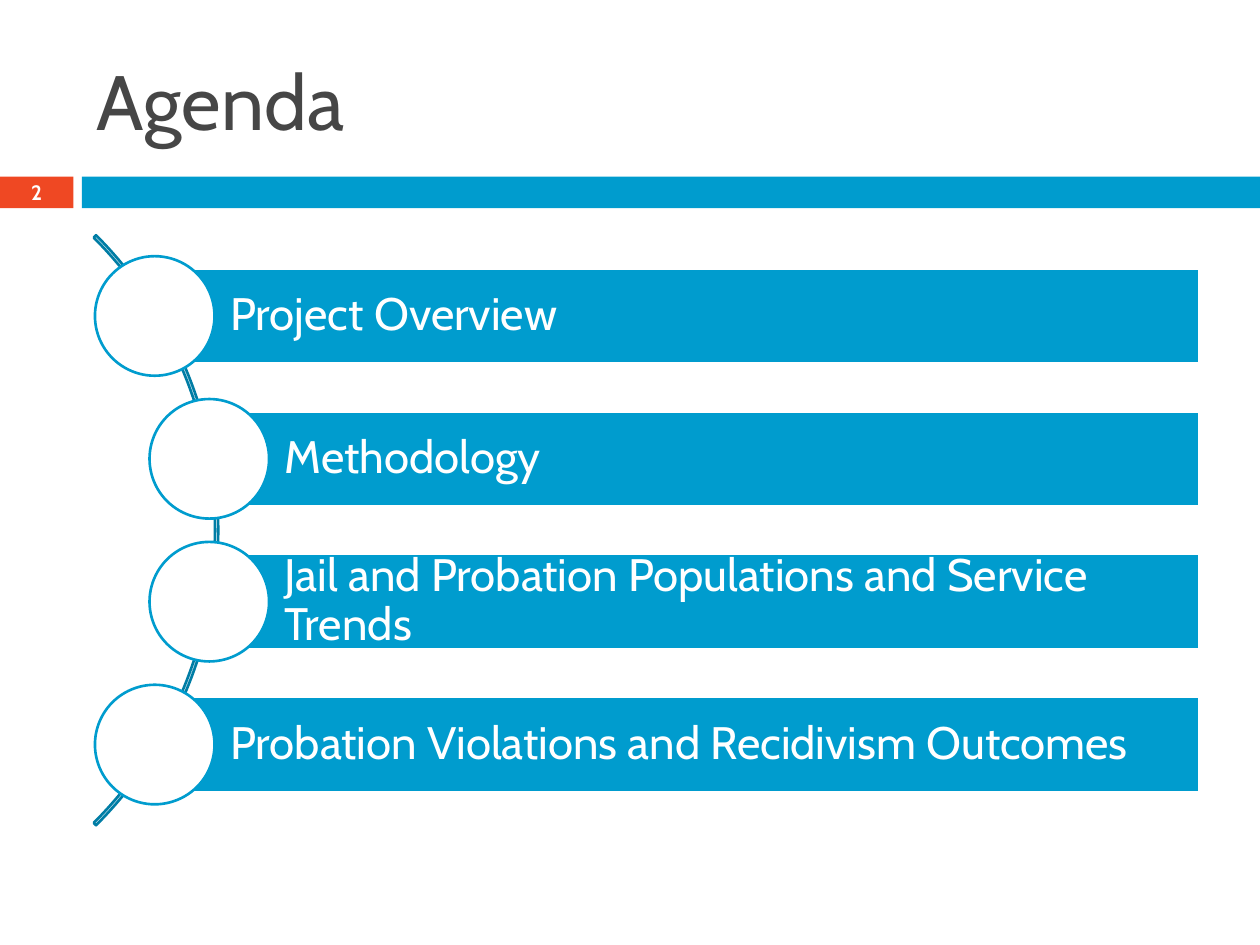
import pptx
import pptx.util
import pptx.dml.color
import pptx.enum.shapes
import pptx.enum.text

Cm, Pt = pptx.util.Cm, pptx.util.Pt
Kind = pptx.enum.shapes.MSO_SHAPE
Align = pptx.enum.text.PP_ALIGN
Anchor = pptx.enum.text.MSO_ANCHOR

TITLE = "Agenda"
NUMBER = "2"
TOPICS = [
    ("Project Overview", 3.12),
    ("Methodology", 4.22),
    ("Jail and Probation Populations and Service Trends", 4.22),
    ("Probation Violations and Recidivism Outcomes", 3.12),
]
FONT = "Cabin"
BLUE, TEAL, RED, GRAY, WHITE = "009CCE", "007DA5", "EF4823", "464646", "FFFFFF"

RIGHT = 24.18
FIRST, STEP = 6.37, 2.88
BAR, DOT, ARC = 1.92, 2.41, 16.82


def color(code):
    return pptx.dml.color.RGBColor.from_string(code)


def draw(slide, kind, box, fill=None, line=None):
    shape = slide.shapes.add_shape(kind, *map(Cm, box))
    shape.shadow.inherit = False
    if fill:
        shape.fill.solid()
        shape.fill.fore_color.rgb = color(fill)
    else:
        shape.fill.background()
    if line:
        shape.line.color.rgb = color(line)
        shape.line.width = Pt(1.5)
    else:
        shape.line.fill.background()
    return shape


def write(shape, text, size, tint, align=Align.LEFT, bold=False):
    frame = shape.text_frame
    frame.word_wrap = True
    frame.vertical_anchor = Anchor.MIDDLE
    par = frame.paragraphs[0]
    par.text = text
    par.alignment = align
    par.font.name = FONT
    par.font.size = Pt(size)
    par.font.bold = bold
    par.font.color.rgb = color(tint)
    return frame


def main():
    deck = pptx.Presentation()
    deck.slide_width, deck.slide_height = Cm(25.4), Cm(19.05)
    slide = deck.slides.add_slide(deck.slide_layouts[6])

    badge = draw(slide, Kind.RECTANGLE, (0, 3.56, 1.48, 0.64), RED)
    frame = write(badge, NUMBER, 11.9, WHITE, Align.CENTER, True)
    frame.margin_top = frame.margin_bottom = 0
    draw(slide, Kind.RECTANGLE, (1.65, 3.56, 23.75, 0.64), BLUE)

    title = slide.shapes.add_textbox(Cm(1.7), Cm(0.64), Cm(22.66), Cm(2.74))
    write(title, TITLE, 44, GRAY)

    mid = FIRST + STEP * (len(TOPICS) - 1) / 2
    arc = draw(slide, Kind.BLOCK_ARC, (-12.42, mid - ARC / 2, ARC, ARC), None, TEAL)
    for spot, value in enumerate((189, 27, 0.004)):
        arc.adjustments[spot] = value

    for row, (text, left) in enumerate(TOPICS):
        mid = FIRST + row * STEP
        bar = draw(slide, Kind.RECTANGLE,
                   (left, mid - BAR / 2, RIGHT - left, BAR), BLUE, WHITE)
        frame = write(bar, text, 26, WHITE)
        frame.margin_left = Cm(1.52)
        frame.margin_top = frame.margin_right = frame.margin_bottom = Cm(0.18)
        frame.paragraphs[0].line_spacing = 0.9
        draw(slide, Kind.OVAL,
             (left - DOT / 2, mid - DOT / 2, DOT, DOT), WHITE, BLUE)

    deck.save("out.pptx")


if __name__ == "__main__":
    main()
